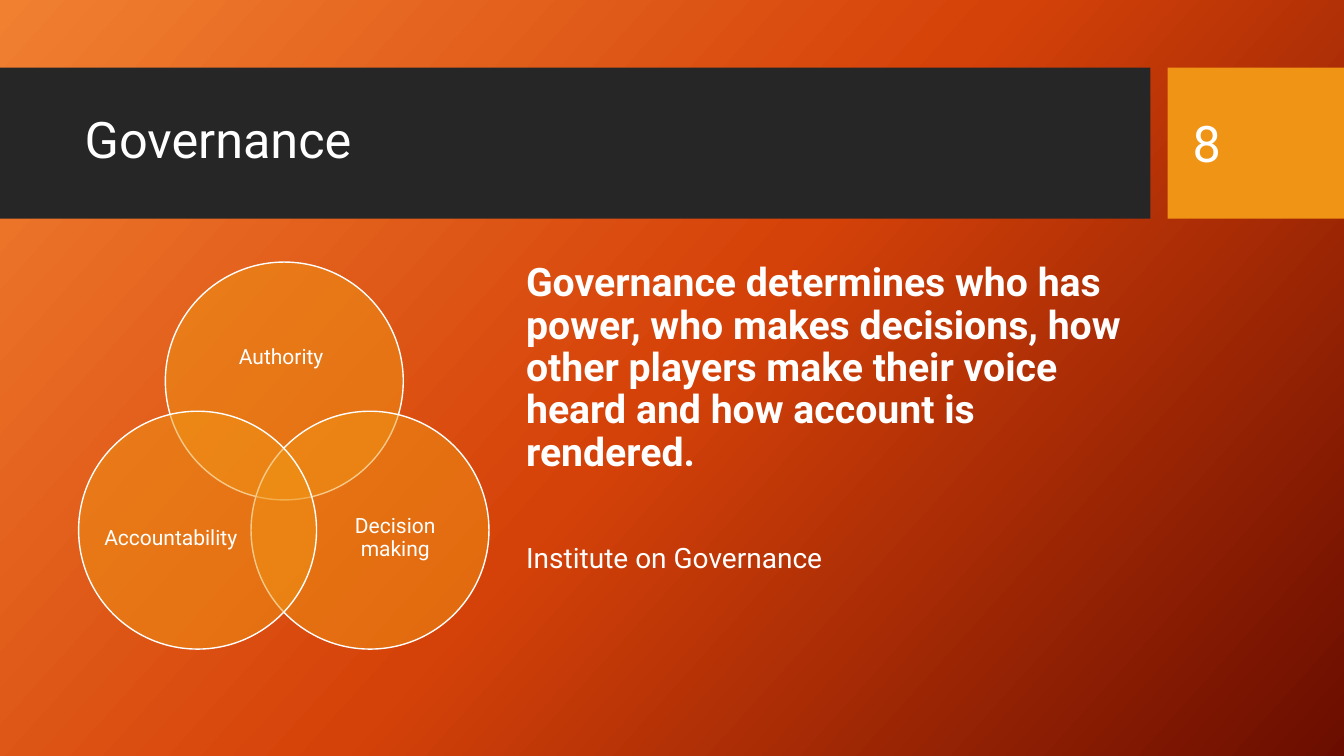
from dataclasses import dataclass

from lxml.etree import SubElement
from pptx import Presentation
from pptx.dml.color import RGBColor
from pptx.enum.shapes import MSO_SHAPE
from pptx.enum.text import MSO_ANCHOR, MSO_AUTO_SIZE, PP_ALIGN
from pptx.oxml.ns import qn
from pptx.util import Inches, Pt


@dataclass(frozen=True)
class Theme:
    """Colours, font and type sizes of the slide."""
    font: str = "Roboto"
    white: str = "FFFFFF"
    band: str = "262626"
    accent: str = "F09415"
    backdrop: tuple = ((0, "F18031"), (50, "D54209"), (100, "6A0D00"))
    backdrop_angle: int = 42
    heading: int = 36
    statement: int = 28
    source: int = 20
    label: int = 15
    line_spacing: float = 0.9


class SlideBuilder:
    """Draws styled elements on one slide."""

    def __init__(self, slide, theme):
        self.slide = slide
        self.theme = theme

    def background(self):
        """Fill the slide with the theme gradient."""
        self.slide.background.fill.gradient()
        gradient = self.slide._element.find(".//" + qn("a:gradFill"))
        stop_list = gradient.find(qn("a:gsLst"))
        for stop in list(stop_list):
            stop_list.remove(stop)
        for position, color in self.theme.backdrop:
            stop = SubElement(stop_list, qn("a:gs"), pos=str(position * 1000))
            SubElement(stop, qn("a:srgbClr"), val=color)
        direction = gradient.find(qn("a:lin"))
        direction.set("ang", str(self.theme.backdrop_angle * 60000))
        direction.set("scaled", "0")

    def shape(self, kind, box, color, opacity=None, outline=None):
        """Add a filled shape, optionally translucent and outlined."""
        shape = self.slide.shapes.add_shape(kind, *map(Inches, box))
        shape.shadow.inherit = False
        shape.fill.solid()
        shape.fill.fore_color.rgb = RGBColor.from_string(color)
        if opacity is not None:
            fill_color = shape._element.spPr.find(qn("a:solidFill"))[0]
            SubElement(fill_color, qn("a:alpha"), val=str(opacity * 1000))
        if outline:
            shape.line.color.rgb = RGBColor.from_string(outline)
            shape.line.width = Pt(1)
        else:
            shape.line.fill.background()

    def add_words(self, paragraph, words, size, bold=False,
                  align=PP_ALIGN.LEFT):
        """Add one styled run to a paragraph."""
        paragraph.alignment = align
        paragraph.line_spacing = self.theme.line_spacing
        run = paragraph.add_run()
        run.text = words
        run.font.name = self.theme.font
        run.font.size = Pt(size)
        run.font.bold = bold
        run.font.color.rgb = RGBColor.from_string(self.theme.white)

    def title(self, words, box):
        """Place the title placeholder in front of the band."""
        title = self.slide.shapes.title
        title.left, title.top, title.width, title.height = map(Inches, box)
        title.text_frame.vertical_anchor = MSO_ANCHOR.MIDDLE
        title.text_frame.auto_size = MSO_AUTO_SIZE.NONE
        self.add_words(title.text_frame.paragraphs[0], words,
                       self.theme.heading)
        title._element.getparent().append(title._element)

    def text_frame(self, box, anchor=MSO_ANCHOR.TOP, inset=True):
        """Add a wrapping text box and return its frame."""
        frame = self.slide.shapes.add_textbox(*map(Inches, box)).text_frame
        frame.word_wrap = True
        frame.vertical_anchor = anchor
        if not inset:
            frame.margin_left = frame.margin_right = 0
            frame.margin_top = frame.margin_bottom = 0
        return frame

    def statement(self, words, source, box):
        """Add a bold statement followed by its source."""
        frame = self.text_frame(box)
        self.add_words(frame.paragraphs[0], words, self.theme.statement,
                       bold=True)
        attribution = frame.add_paragraph()
        attribution.space_before = Pt(50)
        self.add_words(attribution, source, self.theme.source)

    def venn_circle(self, words, corner, label_box):
        """Add a translucent circle with its label."""
        diameter = 2.36
        self.shape(MSO_SHAPE.OVAL, (*corner, diameter, diameter),
                   self.theme.accent, opacity=50, outline=self.theme.white)
        frame = self.text_frame(label_box, MSO_ANCHOR.MIDDLE, inset=False)
        self.add_words(frame.paragraphs[0], words, self.theme.label,
                       align=PP_ALIGN.CENTER)

    def page_number(self, number, box):
        """Add the page number."""
        frame = self.text_frame(box, MSO_ANCHOR.MIDDLE)
        self.add_words(frame.paragraphs[0], number, self.theme.heading)
        frame.paragraphs[0].line_spacing = 1.0


def main():
    """Build and save the governance slide."""
    theme = Theme()
    deck = Presentation()
    deck.slide_width, deck.slide_height = Inches(13.33), Inches(7.5)
    builder = SlideBuilder(deck.slides.add_slide(deck.slide_layouts[5]), theme)

    builder.background()
    builder.shape(MSO_SHAPE.RECTANGLE, (0, 0.67, 11.41, 1.5), theme.band)
    builder.shape(MSO_SHAPE.RECTANGLE, (11.58, 0.67, 1.75, 1.5), theme.accent)
    builder.title("Governance", (0.74, 0.82, 10.51, 1.18))
    builder.statement(
        "Governance determines who has power, who makes decisions, how other "
        "players make their voice heard and how account is rendered.",
        "Institute on Governance", (5.12, 2.56, 6.13, 3.94))
    for words, corner, label_box in (
        ("Authority ", (1.64, 2.6), (1.95, 3.02, 1.73, 1.06)),
        ("Decision making", (2.49, 4.08), (3.21, 4.69, 1.42, 1.3)),
        ("Accountability ", (0.78, 4.08), (1.01, 4.69, 1.42, 1.3)),
    ):
        builder.venn_circle(words, corner, label_box)
    builder.page_number("8", (11.73, 0.82, 1.26, 1.19))
    deck.save("out.pptx")


if __name__ == "__main__":
    main()
